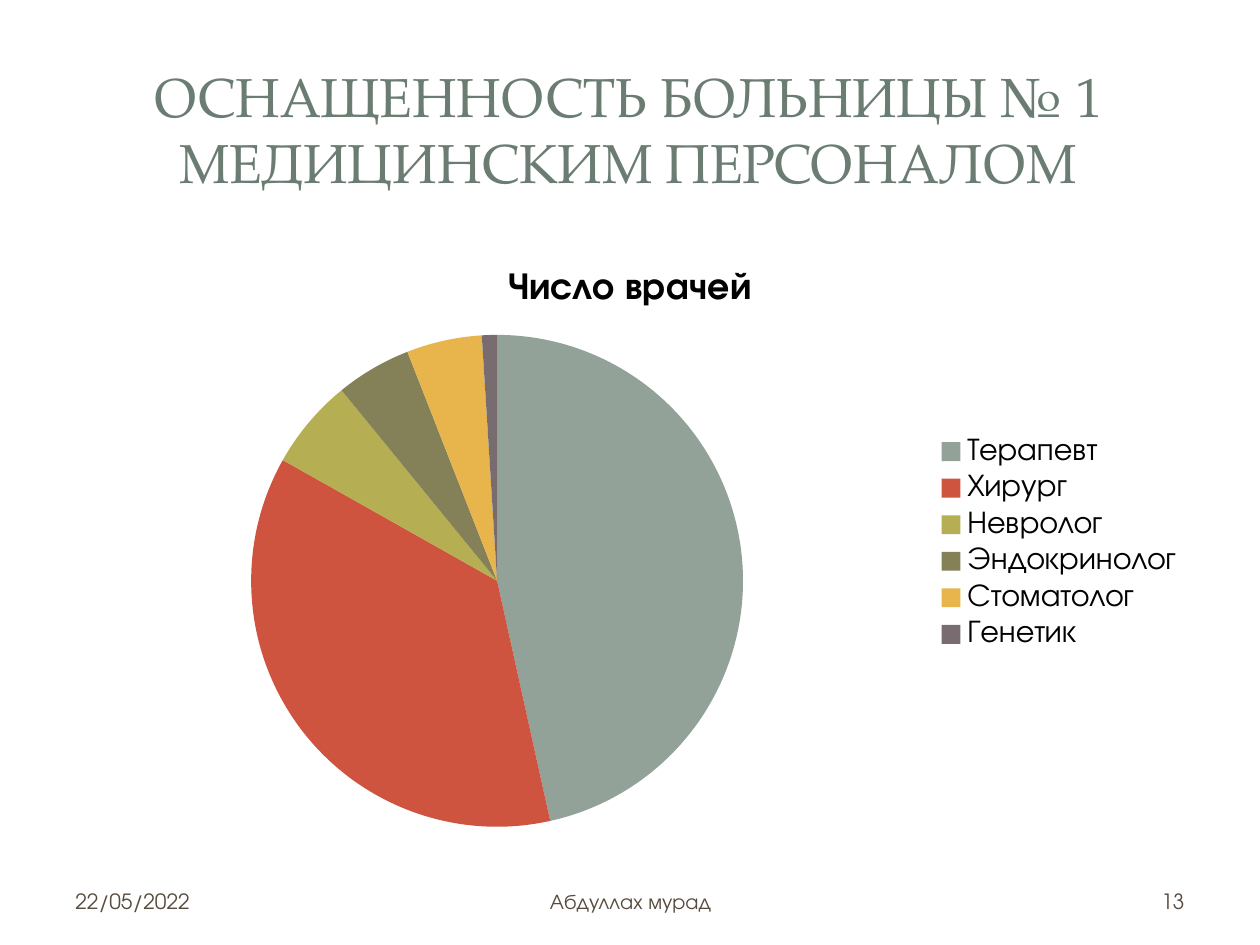
from dataclasses import dataclass

from lxml import etree
from pptx import Presentation
from pptx.chart.data import CategoryChartData
from pptx.dml.color import RGBColor
from pptx.enum.chart import XL_CHART_TYPE, XL_LEGEND_POSITION
from pptx.enum.shapes import MSO_SHAPE
from pptx.enum.text import MSO_ANCHOR, MSO_AUTO_SIZE, PP_ALIGN
from pptx.oxml.ns import qn
from pptx.util import Inches, Pt

PIE = XL_CHART_TYPE.PIE
LEGEND_RIGHT = XL_LEGEND_POSITION.RIGHT
RECTANGLE = MSO_SHAPE.RECTANGLE
MIDDLE = MSO_ANCHOR.MIDDLE
NO_FIT = MSO_AUTO_SIZE.NONE
LEFT, CENTER, RIGHT = PP_ALIGN.LEFT, PP_ALIGN.CENTER, PP_ALIGN.RIGHT

HEAD_FONT = "TeX Gyre Pagella"
BODY_FONT = "TeX Gyre Adventor"
WHITE = RGBColor(0xFF, 0xFF, 0xFF)
BLACK = RGBColor(0x00, 0x00, 0x00)
SAGE = RGBColor(0x6B, 0x7D, 0x72)
BROWN = RGBColor(0x56, 0x4B, 0x3C)

TITLE_FORMAT = {"name": HEAD_FONT, "size": Pt(31.5), "bold": False}
FOOTER_FORMAT = {"name": BODY_FONT, "size": Pt(12)}
CHART_FORMAT = {"name": BODY_FONT, "size": Pt(18)}
CHART_TITLE_FORMAT = {"name": BODY_FONT, "size": Pt(21.6), "bold": True}


@dataclass
class Panel:
    left: float
    top: float
    width: float
    height: float
    opacity: int


@dataclass
class Doctor:
    name: str
    share: int
    color: RGBColor


@dataclass
class Footer:
    text: str
    left: float
    width: float
    align: PP_ALIGN


PANELS = [
    Panel(0.3, 0.3, 9.4, 1.45, 83),
    Panel(0.41, 0.41, 9.17, 1.22, 100),
]
DOCTORS = [
    Doctor("Терапевт", 47, RGBColor(0x93, 0xA2, 0x99)),
    Doctor("Хирург", 37, RGBColor(0xCF, 0x54, 0x3F)),
    Doctor("Невролог", 6, RGBColor(0xB5, 0xAE, 0x53)),
    Doctor("Эндокринолог", 5, RGBColor(0x84, 0x80, 0x58)),
    Doctor("Стоматолог", 5, RGBColor(0xE8, 0xB5, 0x4D)),
    Doctor("Генетик", 1, RGBColor(0x78, 0x6C, 0x71)),
]
FOOTERS = [
    Footer("22/05/2022", 0.5, 2.33, LEFT),
    Footer("Абдуллах мурад", 3.42, 3.17, CENTER),
    Footer("13", 7.17, 2.33, RIGHT),
]


def format_font(font, values: dict, color: RGBColor) -> None:
    for key, value in values.items():
        setattr(font, key, value)
    font.color.rgb = color


def write_text(sp, text: str, align: PP_ALIGN, values: dict, color: RGBColor) -> None:
    tf = sp.text_frame
    tf.word_wrap = True
    tf.auto_size = NO_FIT
    tf.vertical_anchor = MIDDLE
    p = tf.paragraphs[0]
    p.alignment = align
    r = p.add_run()
    r.text = text
    format_font(r.font, values, color)


def draw_panel(s, panel: Panel) -> None:
    sp = s.shapes.add_shape(
        RECTANGLE,
        Inches(panel.left),
        Inches(panel.top),
        Inches(panel.width),
        Inches(panel.height),
    )
    sp.shadow.inherit = False
    sp.fill.solid()
    sp.fill.fore_color.rgb = WHITE
    sp.line.fill.background()
    if panel.opacity < 100:
        color = sp.element.spPr.find(qn("a:solidFill")).find(qn("a:srgbClr"))
        etree.SubElement(color, qn("a:alpha")).set("val", str(panel.opacity * 1000))
    s.shapes.title.element.addprevious(sp.element)


def draw_title(s, text: str) -> None:
    sp = s.shapes.title
    sp.left, sp.top = Inches(0.47), Inches(0.45)
    sp.width, sp.height = Inches(9.03), Inches(1.14)
    write_text(sp, text, CENTER, TITLE_FORMAT, SAGE)


def draw_chart(s, title: str, doctors: list[Doctor]) -> None:
    data = CategoryChartData()
    data.categories = [d.name for d in doctors]
    data.add_series(title, [d.share for d in doctors])
    chart = s.shapes.add_chart(
        PIE, Inches(0.5), Inches(1.92), Inches(9), Inches(4.78), data
    ).chart
    format_font(chart.font, CHART_FORMAT, BLACK)

    chart.has_title = True
    p = chart.chart_title.text_frame.paragraphs[0]
    r = p.add_run()
    r.text = title
    format_font(r.font, CHART_TITLE_FORMAT, BLACK)
    chart.chart_title.include_in_layout = False

    chart.has_legend = True
    chart.legend.position = LEGEND_RIGHT
    chart.legend.include_in_layout = False

    plot = chart.plots[0]
    plot.vary_by_categories = True
    for i, doctor in enumerate(doctors):
        fill = plot.series[0].points[i].format.fill
        fill.solid()
        fill.fore_color.rgb = doctor.color


def draw_footer(s, footer: Footer) -> None:
    sp = s.shapes.add_textbox(
        Inches(footer.left), Inches(6.95), Inches(footer.width), Inches(0.4)
    )
    write_text(sp, footer.text, footer.align, FOOTER_FORMAT, BROWN)


def main() -> None:
    prs = Presentation()
    prs.slide_width, prs.slide_height = Inches(10), Inches(7.5)
    s = prs.slides.add_slide(prs.slide_layouts[5])
    for panel in PANELS:
        draw_panel(s, panel)
    draw_title(s, "ОСНАЩЕННОСТЬ БОЛЬНИЦЫ № 1 МЕДИЦИНСКИМ ПЕРСОНАЛОМ")
    draw_chart(s, "Число врачей", DOCTORS)
    for footer in FOOTERS:
        draw_footer(s, footer)
    prs.save("out.pptx")


if __name__ == "__main__":
    main()
